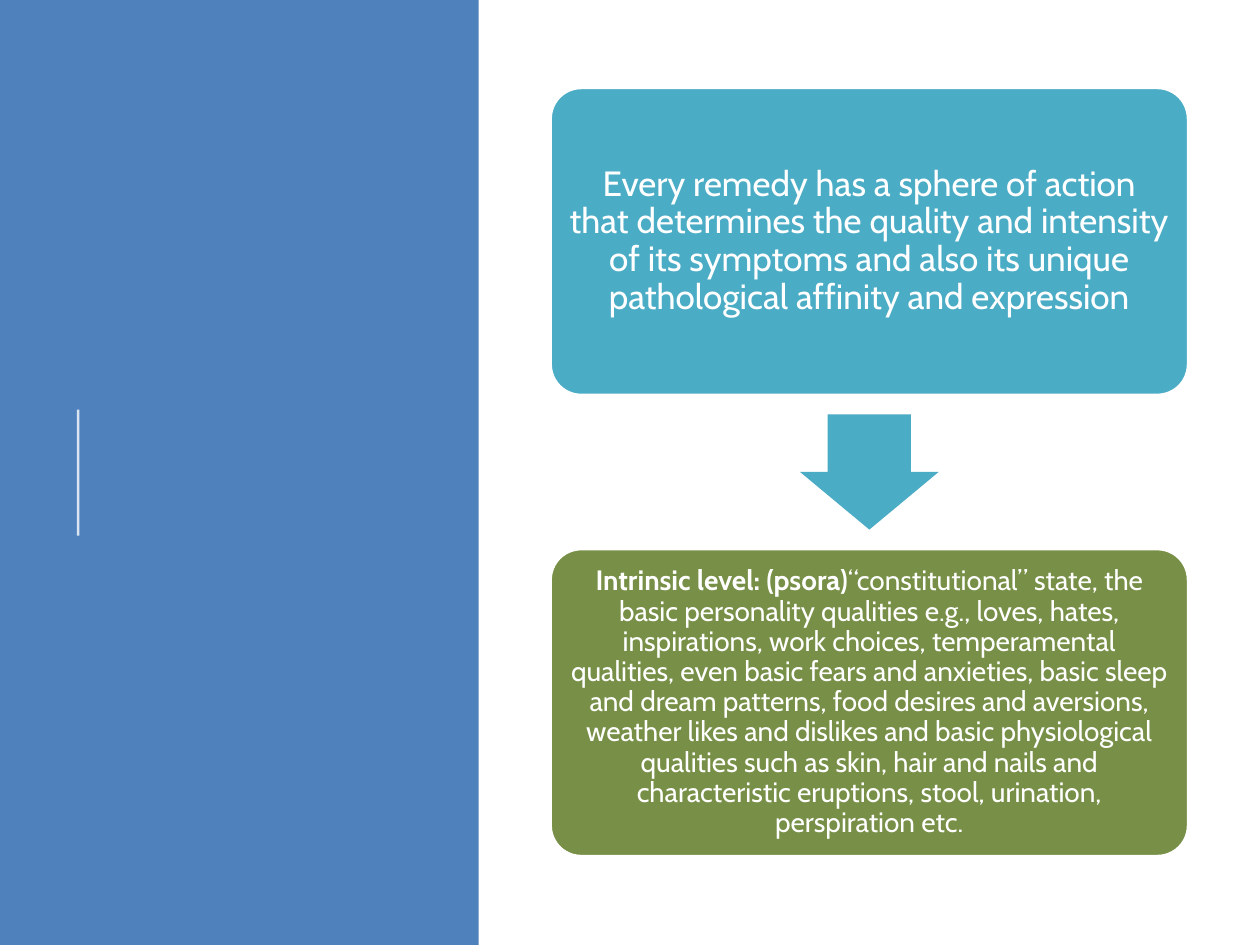
import pptx
import pptx.util
import pptx.dml.color
import pptx.enum.shapes
import pptx.enum.text
import pptx.oxml
import pptx.oxml.ns
from dataclasses import dataclass

WIDE, HIGH = 10, 7.5
LEFT, SPAN, TALL = 0.437, 0.506, 0.325
WHITE = "FFFFFF"
FONT = "Cabin"
KIND = pptx.enum.shapes.MSO_SHAPE


@dataclass
class Card:
    """A rounded card, with its top as a share of the slide's height."""
    top: float
    fill: str
    size: int
    pad: float
    lead: str
    text: str


CARDS = [
    Card(0.093, "4BACC6", 20, 0.08, "",
         "Every remedy has a sphere of action that determines the quality and "
         "intensity of its symptoms and also its unique pathological affinity "
         "and expression"),
    Card(0.581, "778F46", 16, 0.07, "Intrinsic level: (psora)",
         "“constitutional” state, the basic personality qualities e.g., loves, "
         "hates, inspirations, work choices, temperamental qualities, even "
         "basic fears and anxieties, basic sleep and dream patterns, food "
         "desires and aversions, weather likes and dislikes and basic "
         "physiological qualities such as skin, hair and nails and "
         "characteristic eruptions, stool, urination, perspiration etc."),
]


def paint(part, color: str) -> None:
    """Give a fill, or the fill of a line, a solid colour."""
    part.solid()
    part.fore_color.rgb = pptx.dml.color.RGBColor.from_string(color)


def across(share: float) -> int:
    """Turn a share of the slide's width into a length."""
    return pptx.util.Inches(WIDE * share)


def down(share: float) -> int:
    """Turn a share of the slide's height into a length."""
    return pptx.util.Inches(HIGH * share)


def block(slide, kind, left: float, top: float, width: float, height: float, color: str):
    """Draw a filled shape without line or shadow."""
    shape = slide.shapes.add_shape(kind, across(left), down(top), across(width), down(height))
    shape.shadow.inherit = False
    paint(shape.fill, color)
    shape.line.fill.background()
    return shape


def draw_card(slide, card: Card) -> None:
    """Draw a card with its centred text."""
    shape = block(slide, KIND.ROUNDED_RECTANGLE, LEFT, card.top, SPAN, TALL, card.fill)
    shape.adjustments[0] = 0.1
    paint(shape.line.fill, WHITE)
    shape.line.width = pptx.util.Pt(1.5)
    frame = shape.text_frame
    frame.word_wrap = True
    frame.vertical_anchor = pptx.enum.text.MSO_ANCHOR.MIDDLE
    pad = pptx.util.Inches(card.pad)
    frame.margin_left = frame.margin_right = pad
    frame.margin_top = frame.margin_bottom = pad
    para = frame.paragraphs[0]
    para.alignment = pptx.enum.text.PP_ALIGN.CENTER
    para.line_spacing = 0.9
    para.space_after = pptx.util.Pt(0.35 * card.size)
    para.font.name = FONT
    para.font.size = pptx.util.Pt(card.size)
    paint(para.font.fill, WHITE)
    for text, bold in ((card.lead, True), (card.text, False)):
        if text:
            run = para.add_run()
            run.text = text
            run.font.name = FONT
            run.font.size = para.font.size
            run.font.bold = bold
            paint(run.font.fill, WHITE)


def draw_arrow(slide, first: Card, last: Card) -> None:
    """Draw the arrow midway between two cards."""
    width, height = 0.11, 0.122
    mid = (first.top + TALL + last.top) / 2
    arrow = block(slide, KIND.DOWN_ARROW, LEFT + (SPAN - width) / 2, mid - height / 2,
                  width, height, first.fill)
    arrow.adjustments[0] = 0.6
    arrow.adjustments[1] = 0.5


def draw_rule(slide, left: float, half: float) -> None:
    """Draw the pale upright rule, centred on the slide's height."""
    rule = slide.shapes.add_connector(pptx.enum.shapes.MSO_CONNECTOR.STRAIGHT,
                                      across(left), down(0.5 + half),
                                      across(left), down(0.5 - half))
    paint(rule.line.fill, WHITE)
    rule.line.width = pptx.util.Pt(1.5)
    props = rule._element.spPr
    tone = props.find(".//" + pptx.oxml.ns.qn("a:srgbClr"))
    space = pptx.oxml.ns.nsdecls("a")
    tone.append(pptx.oxml.parse_xml(f'<a:alpha {space} val="80000"/>'))
    props.append(pptx.oxml.parse_xml(f"<a:effectLst {space}/>"))


def main() -> None:
    """Build and save the slide."""
    deck = pptx.Presentation()
    deck.slide_width, deck.slide_height = across(1), down(1)
    slide = deck.slides.add_slide(deck.slide_layouts[6])
    block(slide, KIND.RECTANGLE, 0, 0, 0.38, 1, "4F81BD")
    for card in CARDS:
        draw_card(slide, card)
    draw_arrow(slide, *CARDS)
    draw_rule(slide, 0.062, 1 / 15)
    deck.save("out.pptx")


if __name__ == "__main__":
    main()
